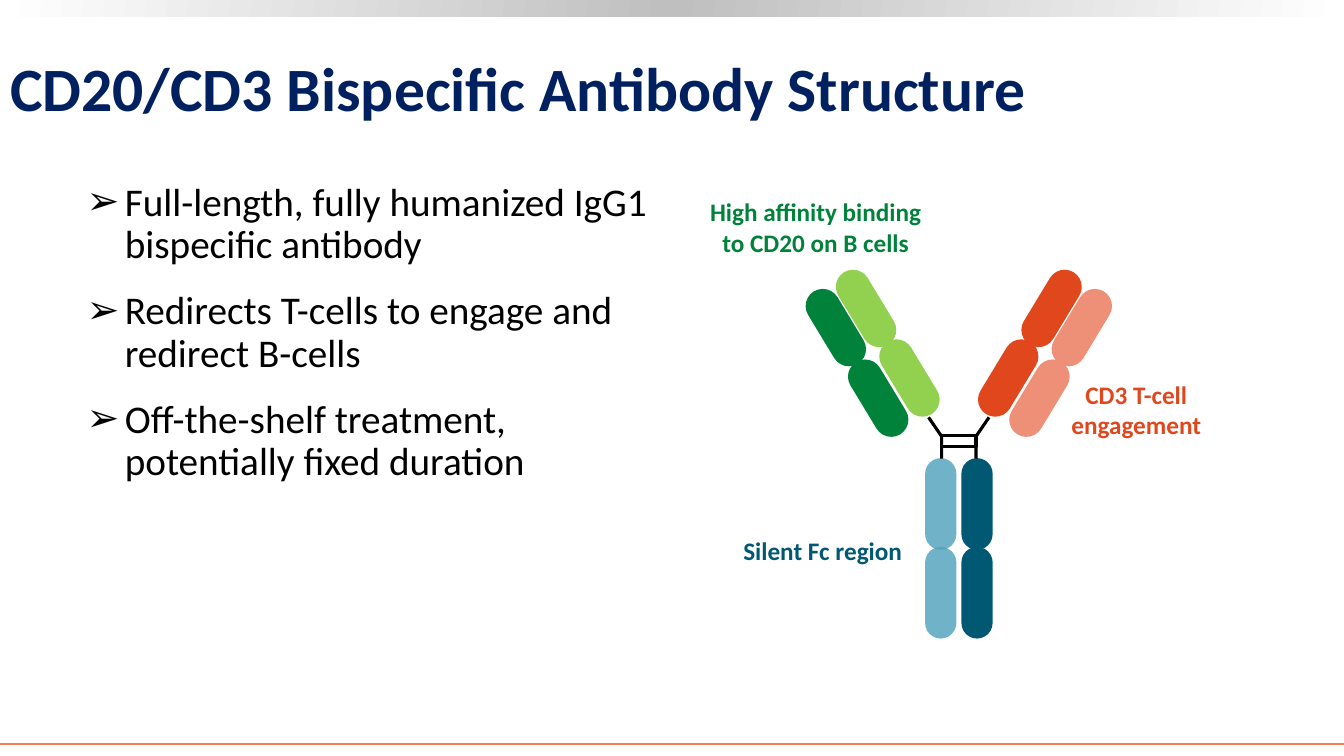
import dataclasses

import lxml.etree
import pptx
import pptx.dml.color
import pptx.enum.shapes
import pptx.enum.text
import pptx.oxml
import pptx.oxml.ns
import pptx.util

Inches = pptx.util.Inches
Pt = pptx.util.Pt
rgb = pptx.dml.color.RGBColor.from_string
qn = pptx.oxml.ns.qn
Shape = pptx.enum.shapes.MSO_SHAPE
Anchor = pptx.enum.text.MSO_ANCHOR
Align = pptx.enum.text.PP_ALIGN


@dataclasses.dataclass(frozen=True)
class Theme:
    font: str = "Calibri"
    title_size: int = 44
    body_size: int = 28
    label_size: int = 18
    navy: str = "002060"
    black: str = "000000"
    accent: str = "F47D55"
    white: str = "FFFFFF"
    silver: str = "BFBFBF"
    green: str = "00823B"
    lime: str = "92D050"
    red: str = "E1471D"
    salmon: str = "ED9077"
    teal: str = "015873"
    sky: str = "4DA1BB"


theme = Theme()


def style_text(paragraph, size, color, bold=False):
    for run in paragraph.runs:
        run.font.name = theme.font
        run.font.size = Pt(size)
        run.font.bold = bold
        run.font.color.rgb = rgb(color)


def add_capsule(center_x, center_y, length, thickness, rotation, color):
    capsule = slide.shapes.add_shape(
        Shape.ROUNDED_RECTANGLE,
        Inches(center_x - length / 2), Inches(center_y - thickness / 2),
        Inches(length), Inches(thickness))
    capsule.adjustments[0] = 0.5
    capsule.rotation = rotation
    capsule.shadow.inherit = False
    capsule.fill.solid()
    capsule.fill.fore_color.rgb = rgb(color)
    capsule.line.fill.background()
    return capsule


presentation = pptx.Presentation()
presentation.slide_width = Inches(13.33)
presentation.slide_height = Inches(7.5)
slide = presentation.slides.add_slide(presentation.slide_layouts[5])

top_band = slide.shapes.add_shape(Shape.RECTANGLE, 0, 0, Inches(13.33), Inches(0.16))
top_band.shadow.inherit = False
top_band.line.fill.background()
top_band.fill.gradient()
gradient = top_band.fill._fill._gradFill
stops = gradient.find(qn("a:gsLst"))
for stop in list(stops):
    stops.remove(stop)
for position, color in ((0, theme.white), (50000, theme.silver), (100000, theme.white)):
    stop = lxml.etree.SubElement(stops, qn("a:gs"), pos=str(position))
    lxml.etree.SubElement(stop, qn("a:srgbClr"), val=color)
gradient.find(qn("a:lin")).set("ang", str(190 * 60000))

bottom_rule = slide.shapes.add_connector(
    pptx.enum.shapes.MSO_CONNECTOR.STRAIGHT, 0, Inches(7.38), Inches(13.33), Inches(7.38))
bottom_rule.line.color.rgb = rgb(theme.accent)
bottom_rule.line.width = Pt(1.5)
lxml.etree.SubElement(bottom_rule._element.spPr, qn("a:effectLst"))

title = slide.shapes.title
title.left, title.top = Inches(0), Inches(0.26)
title.width, title.height = Inches(11.89), Inches(1.21)
title.text_frame.text = "CD20/CD3 Bispecific Antibody Structure"
title.text_frame.auto_size = pptx.enum.text.MSO_AUTO_SIZE.NONE
title.text_frame.vertical_anchor = Anchor.MIDDLE
title.text_frame.paragraphs[0].alignment = Align.LEFT
style_text(title.text_frame.paragraphs[0], theme.title_size, theme.navy, True)

body = slide.shapes.add_textbox(Inches(0.76), Inches(1.76), Inches(5.81), Inches(5.12))
body.text_frame.word_wrap = True
body.text_frame.text = "\n".join((
    "Full-length, fully humanized IgG1 bispecific antibody",
    "Redirects T-cells to engage and redirect B-cells",
    "Off-the-shelf treatment, potentially fixed duration",
))
for paragraph in body.text_frame.paragraphs:
    paragraph.line_spacing = 0.9
    paragraph.space_before = Pt(10)
    paragraph.space_after = Pt(7)
    style_text(paragraph, theme.body_size, theme.black)
    properties = paragraph._p.get_or_add_pPr()
    properties.set("marL", str(Inches(0.38)))
    properties.set("indent", str(-Inches(0.38)))
    bullet_color = lxml.etree.SubElement(properties, qn("a:buClr"))
    lxml.etree.SubElement(bullet_color, qn("a:srgbClr"), val=theme.black)
    lxml.etree.SubElement(properties, qn("a:buFont"), typeface="Wingdings 3")
    properties[-1].set("typeface", theme.font)
    lxml.etree.SubElement(properties, qn("a:buChar"), char="➢")

axis = 9.51

for side, color in ((-1, theme.sky), (1, theme.teal)):
    for center_y in (5.0, 5.88):
        fc_domain = add_capsule(axis + side * 0.18, center_y, 0.91, 0.31, 90, color)
        if color == theme.sky:
            fill_color = fc_domain._element.spPr.find(qn("a:solidFill"))[0]
            lxml.etree.SubElement(fill_color, qn("a:alpha"), val="80000")

for side, outer_color, inner_color in (
        (-1, theme.green, theme.lime), (1, theme.salmon, theme.red)):
    for offset, center_y, color in (
            (1.22, 3.25, outer_color), (0.8, 3.95, outer_color),
            (0.92, 3.06, inner_color), (0.49, 3.75, inner_color)):
        add_capsule(axis + side * offset, center_y, 0.84, 0.34, -side * 58.8, color)

hinge_parts = []
for side in (-1, 1):
    hinge = slide.shapes.build_freeform(Inches(axis + side * 0.3), Inches(4.14))
    hinge.add_line_segments(
        [(Inches(axis + side * 0.17), Inches(y)) for y in (4.33, 4.55)], close=False)
    hinge_parts.append(hinge.convert_to_shape())
hinge_parts.append(slide.shapes.add_shape(
    Shape.RECTANGLE, Inches(axis - 0.17), Inches(4.32), Inches(0.34), Inches(0.11)))
for part in hinge_parts:
    part.shadow.inherit = False
    part.fill.background()
    part.line.color.rgb = rgb(theme.black)
    part.line.width = Pt(2.25)

for text, left, top, width, anchor, color in (
        ("High affinity binding to CD20 on B cells", 6.85, 1.84, 2.48, Anchor.BOTTOM, theme.green),
        ("CD3 T-cell engagement", 10.31, 3.65, 1.92, Anchor.BOTTOM, theme.red),
        ("Silent Fc region", 7.2, 5.06, 1.92, Anchor.MIDDLE, theme.teal)):
    label = slide.shapes.add_shape(
        Shape.ROUNDED_RECTANGLE, Inches(left), Inches(top), Inches(width), Inches(0.8))
    label.shadow.inherit = False
    label.fill.background()
    label.line.fill.background()
    label.text_frame.word_wrap = True
    label.text_frame.vertical_anchor = anchor
    label.text_frame.text = text
    label.text_frame.paragraphs[0].alignment = Align.CENTER
    style_text(label.text_frame.paragraphs[0], theme.label_size, color, True)

presentation.save("out.pptx")
